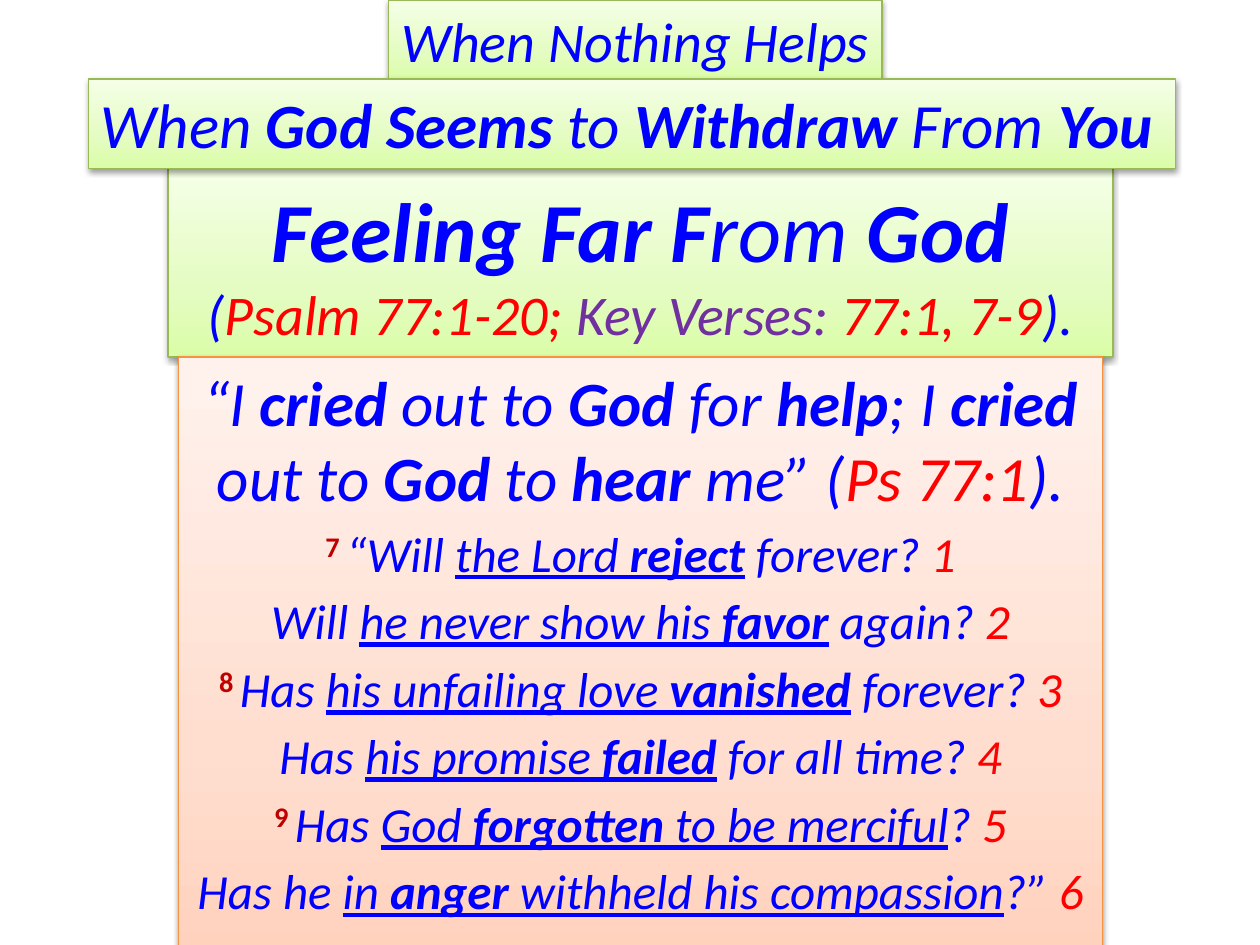
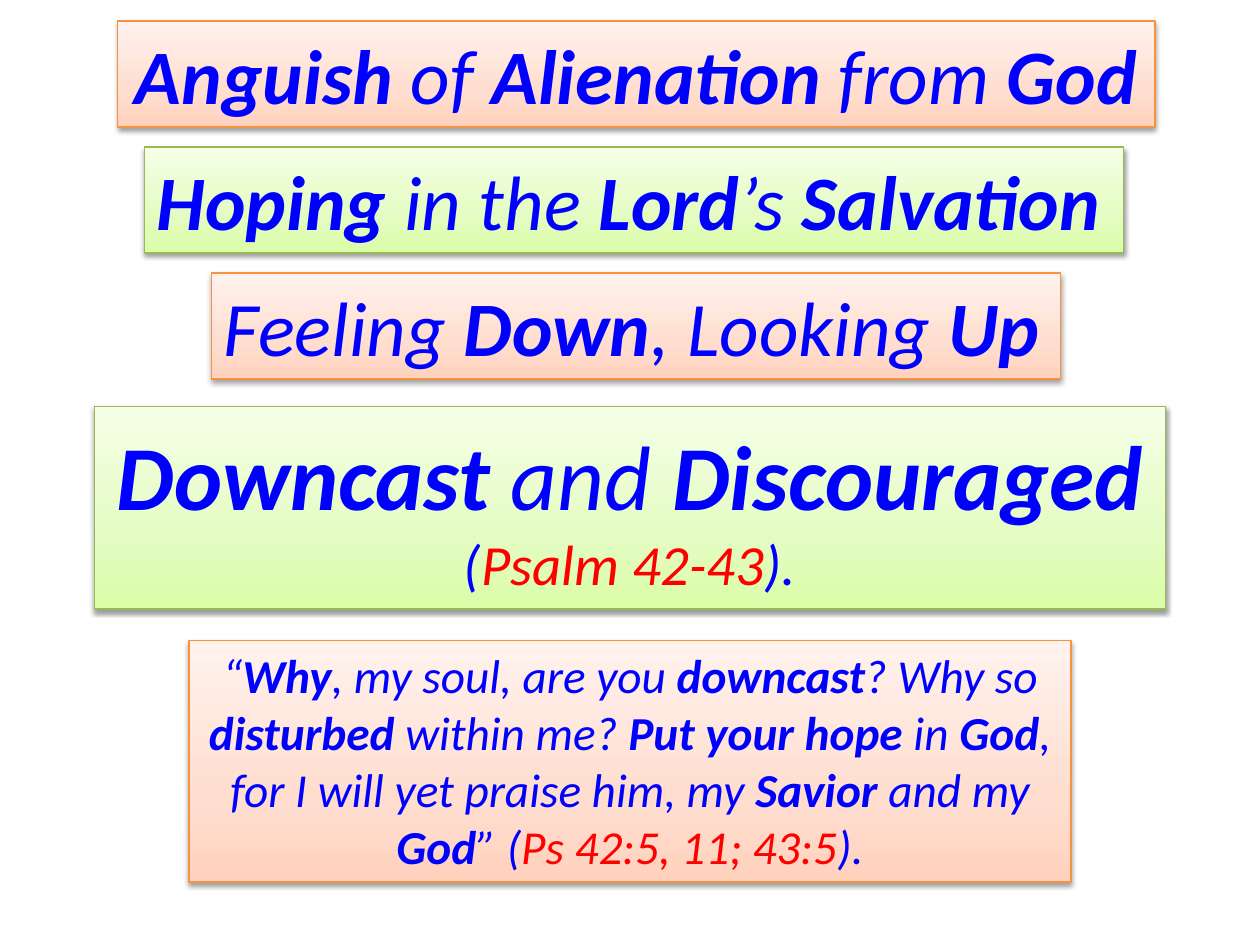
from copy import deepcopy
from dataclasses import dataclass

from lxml import etree
from pptx import Presentation
from pptx.dml.color import RGBColor
from pptx.enum.shapes import MSO_SHAPE
from pptx.enum.text import MSO_ANCHOR, MSO_AUTO_SIZE, PP_ALIGN
from pptx.oxml.ns import qn
from pptx.util import Pt

RECT = MSO_SHAPE.RECTANGLE
TOP, MIDDLE = MSO_ANCHOR.TOP, MSO_ANCHOR.MIDDLE
LEFT, CENTER = PP_ALIGN.LEFT, PP_ALIGN.CENTER
FIT_SHAPE, FIXED = MSO_AUTO_SIZE.SHAPE_TO_FIT_TEXT, MSO_AUTO_SIZE.NONE


# Theme
@dataclass(frozen=True)
class Palette:
    line: str
    stops: tuple[str, str, str]


@dataclass(frozen=True)
class Theme:
    font: str = "Calibri"
    text: str = "0000FF"
    reference: str = "FF0000"
    key: str = "7030A0"
    verse: str = "C00000"
    green: Palette = Palette("98B955", ("DAFDA7", "E4FCC2", "F5FFE7"))
    peach: Palette = Palette("F69240", ("FFD2BD", "FFDED0", "FFF2ED"))
    stop_positions: tuple[float, float, float] = (0, 0.35, 1)
    line_width: float = 0.75
    heading: float = 44
    title: float = 48
    large_title: float = 52.2
    subtitle: float = 32
    large_subtitle: float = 32.4
    lead: float = 36
    question: float = 28
    quote: float = 27


THEME = Theme()


# Text marks: *bold*  _underlined_  ~reference~  |key words|  ^verse number^
@dataclass(frozen=True)
class Line:
    text: str
    size: float
    space: float = 0


@dataclass(frozen=True)
class Panel:
    left: float
    top: float
    width: float
    height: float
    palette: Palette
    lines: tuple[Line, ...]
    align: PP_ALIGN = CENTER
    anchor: MSO_ANCHOR = TOP
    wrap: bool = True
    grow: bool = False
    one_paragraph: bool = False


def add_run(p, text: str, *, size: float, color: str, bold: bool = False,
            italic: bool = True, underline: bool = False, raised: bool = False) -> None:
    r = p.add_run()
    r.text = text
    f = r.font
    f.name, f.size, f.color.rgb = THEME.font, Pt(size), RGBColor.from_string(color)
    f.bold, f.italic, f.underline = bold, italic, underline
    if raised:
        r._r.get_or_add_rPr().set("baseline", "30000")


def add_marked(p, line: Line) -> None:
    on = dict.fromkeys("*_~|^", False)
    chunk = ""
    for ch in line.text + "*":
        if ch not in on:
            chunk += ch
            continue
        if chunk:
            color = (THEME.verse if on["^"] else THEME.reference if on["~"]
                     else THEME.key if on["|"] else THEME.text)
            add_run(p, chunk, size=line.size, color=color, bold=on["*"] or on["^"],
                    italic=not on["^"], underline=on["_"], raised=on["^"])
        chunk = ""
        on[ch] = not on[ch]


def paint(sp, palette: Palette) -> None:
    # Light at the top, darker at the bottom
    sp.fill.gradient()
    sp.fill.gradient_angle = 90
    gs = sp._element.spPr.find(".//" + qn("a:gs"))
    gs.addnext(deepcopy(gs))
    for stop, position, color in zip(sp.fill.gradient_stops, THEME.stop_positions, palette.stops):
        stop.position = position
        stop.color.rgb = RGBColor.from_string(color)
    sp.line.color.rgb = RGBColor.from_string(palette.line)
    sp.line.width = Pt(THEME.line_width)
    # Soft shadow straight below
    sp.shadow.inherit = False
    effects = sp._element.spPr.find(qn("a:effectLst"))
    shadow = etree.SubElement(effects, qn("a:outerShdw"), blurRad=str(Pt(3.1)),
                              dist=str(Pt(1.6)), dir="5400000", rotWithShape="0")
    color = etree.SubElement(shadow, qn("a:srgbClr"), val="000000")
    etree.SubElement(color, qn("a:alpha"), val="38000")


def add_panel(slide, panel: Panel) -> None:
    sp = slide.shapes.add_shape(RECT, Pt(panel.left), Pt(panel.top),
                                Pt(panel.width), Pt(panel.height))
    paint(sp, panel.palette)
    tf = sp.text_frame
    tf.word_wrap = panel.wrap
    tf.auto_size = FIT_SHAPE if panel.grow else FIXED
    tf.vertical_anchor = panel.anchor
    p = tf.paragraphs[0]
    for i, line in enumerate(panel.lines):
        if i and panel.one_paragraph:
            p.add_line_break()
        elif i:
            p = tf.add_paragraph()
        p.alignment = panel.align
        p.space_before = Pt(line.space)
        add_marked(p, line)


def title_panel(left: float, top: float, width: float, height: float, *lines: Line) -> Panel:
    return Panel(left, top, width, height, THEME.green, lines, anchor=MIDDLE, one_paragraph=True)


def heading_panel(row: int, left: float, width: float, palette: Palette, text: str,
                  align: PP_ALIGN = LEFT) -> Panel:
    return Panel(left, 12 + 72 * row, width, 60.6, palette, (Line(text, THEME.heading),),
                 align=align, wrap=False, grow=True)


# Slide 1: feeling far from God
QUESTIONS = (
    "^7\u00a0^“Will _the Lord *reject*_ forever? ~1~",
    "Will _he never show his *favor*_ again? ~2~",
    "^8\u00a0^Has _his unfailing love *vanished*_ forever? ~3~",
    "Has _his promise *failed*_ for all time? ~4~",
    "^9\u00a0^Has _God *forgotten* to be merciful_? ~5~",
    "Has he _in *anger* withheld his compassion_?” ~6~",
)
FAR_FROM_GOD = (
    title_panel(96, 96, 540, 108,
                Line("*Feeling Far F*rom *God*", THEME.title),
                Line("(~Psalm 77:1-20; ~|Key Verses:|~ 77:1, 7-9~).", THEME.subtitle)),
    Panel(102, 204, 528, 342, THEME.peach, (
        Line("“I *cried* out to *God* for *help*; I *cried* out to *God* to *hear* me” "
             "(~Ps 77:1~).", THEME.lead, 7),
        *(Line(question, THEME.question, 5) for question in QUESTIONS))),
    Panel(222, 0, 282, 46, THEME.green, (Line("When Nothing Helps", THEME.subtitle),), grow=True),
    Panel(50.4, 45.2, 621.4, 51, THEME.green,
          (Line("When *God Seems* to *Withdraw* From *You*", THEME.lead),),
          align=LEFT, wrap=False, grow=True),
)

# Slide 2: downcast and discouraged
DOWNCAST = (
    title_panel(54, 232.4, 612, 115.6,
                Line("*Downcast* and *Discouraged*", THEME.large_title),
                Line("(~Psalm 42-43~).", THEME.large_subtitle)),
    Panel(108, 366, 504, 138, THEME.peach, (
        Line("“*Why*, my soul, are you *downcast*? Why so *disturbed* within me? "
             "*Put your hope* in *God*, for I will yet praise him, my *Savior* and my "
             "*God*” (~Ps 42:5, 11; 43:5~).", THEME.quote, 5),)),
    heading_panel(0, 67, 593, THEME.peach, "*Anguish* of *Alienation* from *God*", CENTER),
    heading_panel(1, 82.4, 559.6, THEME.green, "*Hoping* in the *Lord*’s *Salvation*"),
    heading_panel(2, 120.8, 485.2, THEME.peach, "Feeling *Down*, Looking *Up*"),
)


def main() -> None:
    prs = Presentation()
    prs.slide_width, prs.slide_height = Pt(720), Pt(540)
    blank = prs.slide_layouts[6]
    for panels in (FAR_FROM_GOD, DOWNCAST):
        slide = prs.slides.add_slide(blank)
        for panel in panels:
            add_panel(slide, panel)
    prs.save("out.pptx")


if __name__ == "__main__":
    main()
